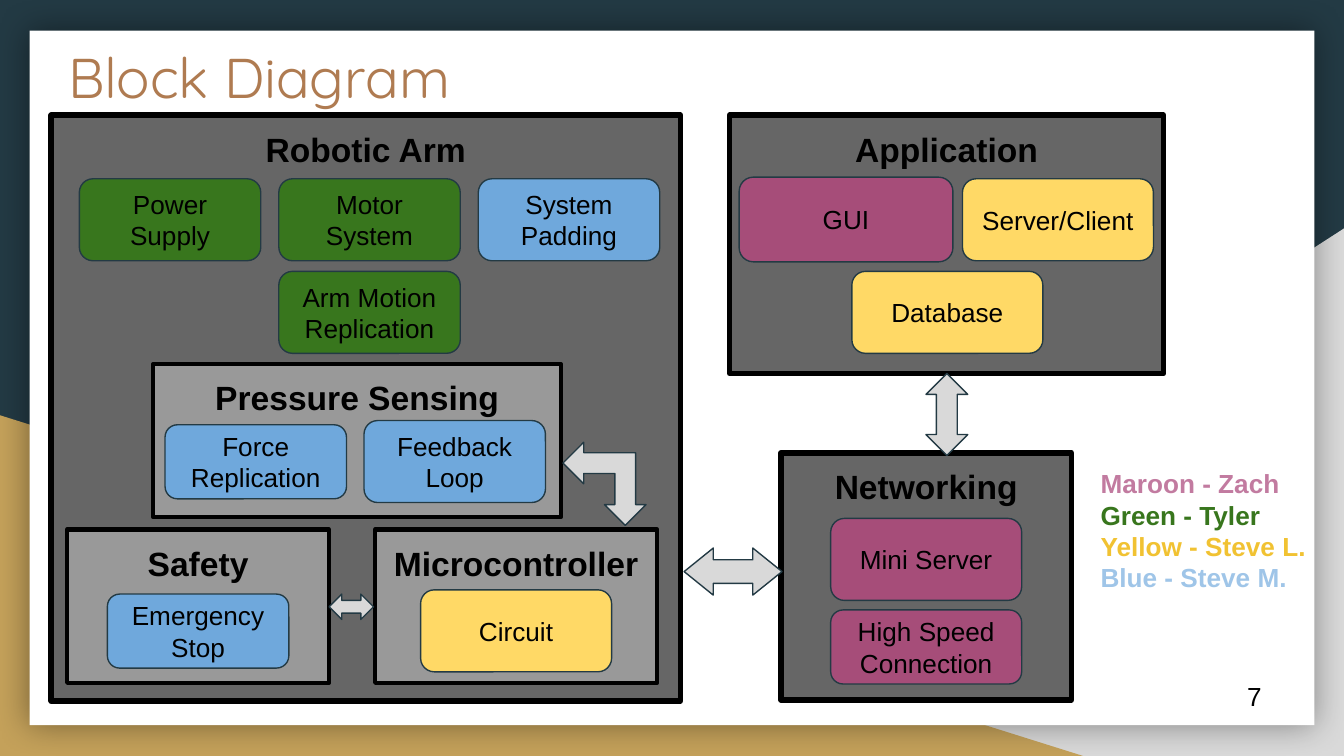
from lxml import etree
from pptx import Presentation
from pptx.dml.color import RGBColor
from pptx.enum.shapes import MSO_SHAPE as Preset
from pptx.enum.text import MSO_ANCHOR as Anchor, PP_ALIGN as Align
from pptx.oxml.ns import qn
from pptx.util import Cm, Pt

BLACK = RGBColor(0x00, 0x00, 0x00)
WHITE = RGBColor(0xFF, 0xFF, 0xFF)
NAVY = RGBColor(0x23, 0x3A, 0x44)
SAND = RGBColor(0xC4, 0xA1, 0x5A)
COPPER = RGBColor(0xAF, 0x7B, 0x51)
SILVER = RGBColor(0xD9, 0xD9, 0xD9)
DARK_GRAY = RGBColor(0x66, 0x66, 0x66)
MID_GRAY = RGBColor(0x99, 0x99, 0x99)
GREEN = RGBColor(0x38, 0x76, 0x1D)
BLUE = RGBColor(0x6F, 0xA8, 0xDC)
MAROON = RGBColor(0xA6, 0x4D, 0x79)
YELLOW = RGBColor(0xFF, 0xD9, 0x66)
PINK_TEXT = RGBColor(0xC2, 0x7B, 0xA0)
GOLD_TEXT = RGBColor(0xF1, 0xC2, 0x32)
SKY_TEXT = RGBColor(0x9F, 0xC5, 0xE8)

HEADING = {"name": "Arial", "size": Pt(18), "bold": True}
LABEL = {"name": "Arial", "size": Pt(14), "bold": False}
LEGEND = {"name": "Arial", "size": Pt(14), "bold": True}
TITLE = {"name": "Quicksand", "size": Pt(30), "bold": False}

presentation = Presentation()
presentation.slide_width, presentation.slide_height = Cm(25.4), Cm(14.29)
slide = presentation.slides.add_slide(presentation.slide_layouts[6])
slide.background.fill.solid()
slide.background.fill.fore_color.rgb = NAVY


def add_shape(preset, box, fill, line=None, width=0.75):
    shape = slide.shapes.add_shape(preset, *map(Cm, box))
    shape.shadow.inherit = False
    shape.fill.solid()
    shape.fill.fore_color.rgb = fill
    if line is None:
        shape.line.fill.background()
    else:
        shape.line.color.rgb = line
        shape.line.width = Pt(width)
    return shape


def write(shape, lines, font, align=Align.LEFT, anchor=Anchor.TOP):
    """Fill the shape with one paragraph per (text, colour) pair."""
    frame = shape.text_frame
    frame_format = {"word_wrap": True, "vertical_anchor": anchor}
    for side in ("left", "top", "right", "bottom"):
        frame_format[f"margin_{side}"] = Cm(0.25)
    for name, value in frame_format.items():
        setattr(frame, name, value)
    for index, (text, color) in enumerate(lines):
        paragraph = frame.add_paragraph() if index else frame.paragraphs[0]
        paragraph.alignment = align
        run = paragraph.add_run()
        run.text = text
        for name, value in font.items():
            setattr(run.font, name, value)
        run.font.color.rgb = color


# Backdrop
silver_corner = add_shape(Preset.RIGHT_TRIANGLE, (9.96, 4.32, 15.44, 9.97), SILVER)
silver_corner.element.spPr.find(qn("a:xfrm")).set("flipH", "1")
add_shape(Preset.RIGHT_TRIANGLE, (0, 7.85, 20.47, 6.44), SAND)
card = add_shape(Preset.RECTANGLE, (0.56, 0.58, 24.28, 13.13), WHITE)
effects = card.element.spPr.find(qn("a:effectLst"))
glow = etree.SubElement(effects, qn("a:outerShdw"), blurRad=str(Pt(18)), dist="0",
                        algn="ctr", rotWithShape="0")
glow_color = etree.SubElement(glow, qn("a:srgbClr"), val="000000")
etree.SubElement(glow_color, qn("a:alpha"), val="40000")

# Panels, outer ones first
INNER_TOP, INNER_HEIGHT = 10.01, 2.9
panels = [
    ("Robotic Arm", (0.97, 2.18, 11.89, 11.07), DARK_GRAY, 3),
    ("Application", (13.79, 2.18, 8.2, 4.88), DARK_GRAY, 3),
    ("Networking", (14.76, 8.56, 5.49, 4.67), DARK_GRAY, 3),
    ("Pressure Sensing", (2.9, 6.88, 7.7, INNER_HEIGHT), MID_GRAY, 2.25),
    ("Safety", (1.27, INNER_TOP, 4.95, INNER_HEIGHT), MID_GRAY, 2.25),
    ("Microcontroller", (7.09, INNER_TOP, 5.33, INNER_HEIGHT), MID_GRAY, 2.25),
]
for text, box, fill, width in panels:
    panel = add_shape(Preset.RECTANGLE, box, fill, BLACK, width)
    write(panel, [(text, BLACK)], HEADING, Align.CENTER)

# Blocks inside the panels
NARROW, WIDE = 3.43, 3.61
TALL, SHORT = 1.55, 1.4
ROW_1, ROW_2 = 3.38, 5.13
COLUMNS = [1.5 + 3.77 * column for column in range(3)]
blocks = [
    ("Power Supply", (COLUMNS[0], ROW_1, NARROW, TALL), GREEN),
    ("Motor System", (COLUMNS[1], ROW_1, NARROW, TALL), GREEN),
    ("System Padding", (COLUMNS[2], ROW_1, NARROW, TALL), BLUE),
    ("Arm Motion Replication", (COLUMNS[1], ROW_2, NARROW, TALL), GREEN),
    ("Force Replication", (3.12, 8.03, NARROW, SHORT), BLUE),
    ("Feedback Loop", (6.88, 7.95, NARROW, TALL), BLUE),
    ("Emergency Stop", (2.03, 11.23, NARROW, SHORT), BLUE),
    ("Circuit", (7.95, 11.15, WIDE, TALL), YELLOW),
    ("GUI", (13.97, 3.35, 4.04, 1.6), MAROON),
    ("Server/Client", (18.19, ROW_1, WIDE, TALL), YELLOW),
    ("Database", (16.1, ROW_2, WIDE, TALL), YELLOW),
    ("Mini Server", (15.7, 9.8, WIDE, TALL), MAROON),
    ("High Speed Connection", (15.7, 11.53, WIDE, SHORT), MAROON),
]
for text, box, fill in blocks:
    block = add_shape(Preset.ROUNDED_RECTANGLE, box, fill, NAVY)
    write(block, [(text, BLACK)], LABEL, Align.CENTER, Anchor.MIDDLE)

# Block arrows between the panels
arrows = [
    (Preset.LEFT_RIGHT_ARROW, (12.93, 10.36, 1.85, 0.89), 0, (0.5, 0.62)),
    (Preset.UP_DOWN_ARROW, (17.5, 7.06, 0.79, 1.55), 0, (0.5, 0.5)),
    (Preset.LEFT_RIGHT_ARROW, (6.22, 11.23, 0.84, 0.48), 0, (0.5, 0.5)),
    (Preset.LEFT_UP_ARROW, (10.64, 8.36, 1.57, 1.57), 270, ()),
]
for preset, box, rotation, adjustments in arrows:
    arrow = add_shape(preset, box, SILVER, NAVY)
    arrow.rotation = rotation
    for index, value in enumerate(adjustments):
        arrow.adjustments[index] = value

# Title, legend and page number
legend = [("Maroon - Zach", PINK_TEXT), ("Green - Tyler", GREEN),
          ("Yellow - Steve L.", GOLD_TEXT), ("Blue - Steve M.", SKY_TEXT)]
texts = [
    ((1.04, 0.56, 23.67, 1.6), [("Block Diagram", COPPER)], TITLE, Anchor.TOP),
    ((20.55, 8.59, 4.62, 4.42), legend, LEGEND, Anchor.TOP),
    ((23.32, 12.62, 1.52, 1.09), [("7", BLACK)], LABEL, Anchor.MIDDLE),
]
for box, lines, font, anchor in texts:
    text_box = slide.shapes.add_textbox(*map(Cm, box))
    write(text_box, lines, font, anchor=anchor)

presentation.save("out.pptx")
